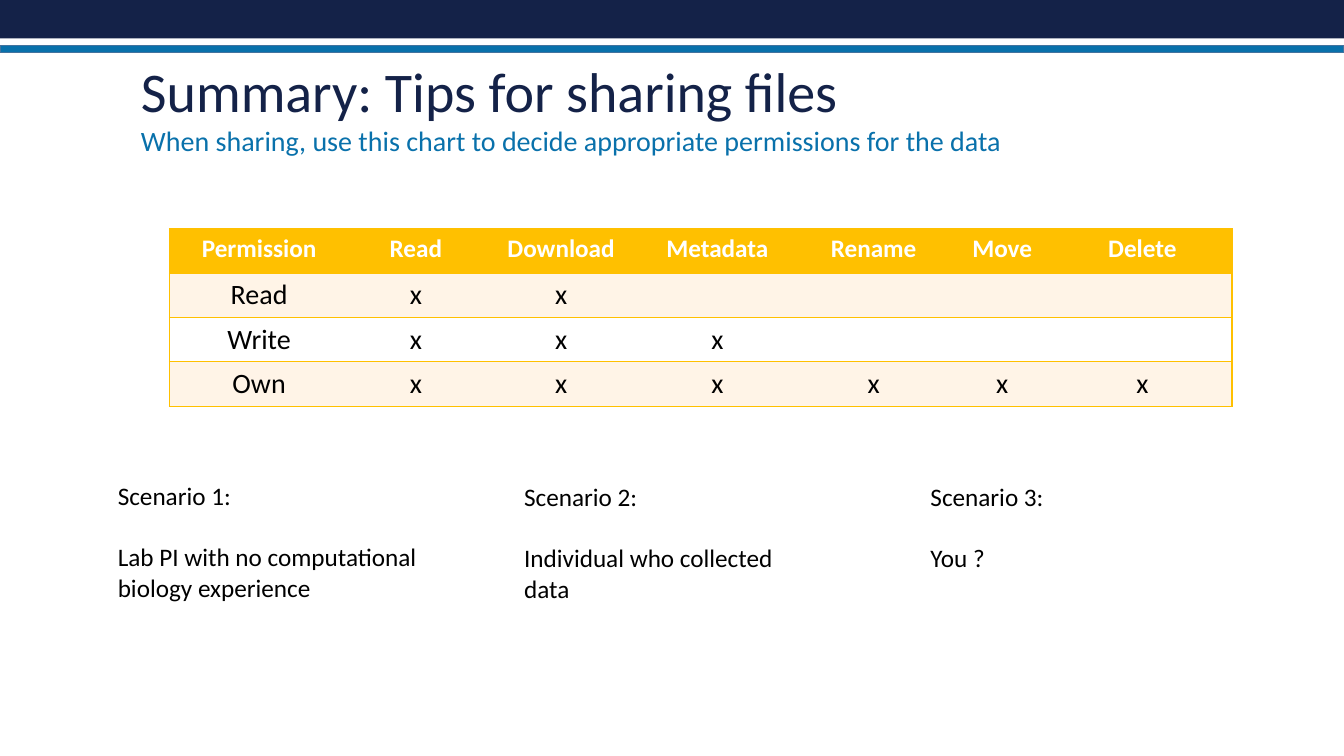
from lxml.etree import SubElement
from pptx import Presentation
from pptx.dml.color import RGBColor
from pptx.enum.shapes import MSO_SHAPE
from pptx.enum.text import MSO_ANCHOR, PP_ALIGN
from pptx.oxml.ns import qn
from pptx.util import Inches, Pt

COLORS = {
    "navy": "142248",
    "blue": "0971AB",
    "edge": "43739E",
    "gold": "FFC000",
    "cream": "FFF4E7",
    "white": "FFFFFF",
    "black": "000000",
}
FONT = "Calibri"
PLAIN_TABLE_STYLE = "{2D5ABB26-0587-4C30-8999-92F81FD0307C}"
HEADINGS = ["Permission", "Read", "Download", "Metadata", "Rename", "Move", "Delete"]
COLUMN_WIDTHS = [1.78, 1.33, 1.55, 1.55, 1.55, 1, 1.78]
ROW_HEIGHT = 0.44
GRANTED = {"Read": 2, "Write": 3, "Own": 6}
SCENARIOS = [
    (1.07, 4.72, 3.66, 1.62, "Scenario 1:", "Lab PI with no computational biology experience"),
    (5.1, 4.73, 3.02, 1.62, "Scenario 2:", "Individual who collected data"),
    (9.13, 4.73, 3.02, 1.31, "Scenario 3:", "You ?"),
]


def color(name):
    """Return the named colour."""
    return RGBColor.from_string(COLORS[name])


def write(para, text, size=18, ink="black", bold=False, align=None, line_spacing=None, before=None):
    """Write one formatted span into a paragraph."""
    para.alignment = align
    para.line_spacing = line_spacing
    if before is not None:
        para.space_before = Pt(before)
    span = para.add_run()
    span.text = text
    span.font.name = FONT
    span.font.size = Pt(size)
    span.font.bold = bold
    span.font.color.rgb = color(ink)


def add_band(page, top, height, fill, edge=None):
    """Add a full-width band."""
    band = page.shapes.add_shape(
        MSO_SHAPE.RECTANGLE, 0, Inches(top), Inches(13.33), Inches(height))
    band.shadow.inherit = False
    band.fill.solid()
    band.fill.fore_color.rgb = color(fill)
    if edge:
        band.line.color.rgb = color(edge)
        band.line.width = Pt(1)
    else:
        band.line.fill.background()


def add_text_frame(page, left, top, width, height, anchor=MSO_ANCHOR.TOP):
    """Add a wrapping text box and return its frame."""
    box = page.shapes.add_textbox(Inches(left), Inches(top), Inches(width), Inches(height))
    frame = box.text_frame
    frame.word_wrap = True
    frame.vertical_anchor = anchor
    return frame


def add_scenario(page, left, top, width, height, label, description):
    """Add a scenario label with its description below."""
    frame = add_text_frame(page, left, top, width, height)
    write(frame.paragraphs[0], label)
    write(frame.add_paragraph(), description, before=22)


def style_cell(cell, fill, sides):
    """Fill a cell and draw gold borders on the given sides."""
    properties = cell._tc.get_or_add_tcPr()
    for side in sides:
        line = SubElement(properties, qn(f"a:ln{side}"), w=str(Pt(1)))
        solid = SubElement(line, qn("a:solidFill"))
        SubElement(solid, qn("a:srgbClr"), val=COLORS["gold"])
    cell.fill.solid()
    cell.fill.fore_color.rgb = color(fill)


def add_permission_table(page):
    """Add the table of rights granted by each permission."""
    rows = [HEADINGS]
    for name, count in GRANTED.items():
        rows.append([name] + ["x"] * count + [""] * (len(HEADINGS) - 1 - count))
    table = page.shapes.add_table(
        len(rows), len(HEADINGS), Inches(1.68), Inches(2.27),
        Inches(sum(COLUMN_WIDTHS)), Inches(ROW_HEIGHT * len(rows))).table
    table._tbl.tblPr.find(qn("a:tableStyleId")).text = PLAIN_TABLE_STYLE
    table.horz_banding = False
    for column, width in zip(table.columns, COLUMN_WIDTHS):
        column.width = Inches(width)
    last = len(HEADINGS) - 1
    for row_index, values in enumerate(rows):
        header = row_index == 0
        table.rows[row_index].height = Inches(ROW_HEIGHT)
        fill = "gold" if header else "cream" if row_index % 2 else "white"
        for column_index, text in enumerate(values):
            cell = table.cell(row_index, column_index)
            sides = {0: "LTB", last: "RTB"}.get(column_index, "TB")
            style_cell(cell, fill, sides)
            if text:
                write(cell.text_frame.paragraphs[0], text, size=18 if header else 20,
                      ink="white" if header else "black", bold=header, align=PP_ALIGN.CENTER)


def main():
    """Build and save the slide."""
    deck = Presentation()
    deck.slide_width, deck.slide_height = Inches(13.33), Inches(7.5)
    page = deck.slides.add_slide(deck.slide_layouts[6])
    add_band(page, 0, 0.38, "navy")
    add_band(page, 0.45, 0.07, "blue", edge="edge")
    title = add_text_frame(page, 1.3, 0.6, 11.83, 0.69, anchor=MSO_ANCHOR.BOTTOM)
    write(title.paragraphs[0], "Summary: Tips for sharing files",
          size=40, ink="navy", line_spacing=0.9)
    subtitle = add_text_frame(page, 1.3, 1.21, 11.74, 0.52)
    write(subtitle.paragraphs[0],
          "When sharing, use this chart to decide appropriate permissions for the data",
          size=20, ink="blue", line_spacing=0.9)
    add_permission_table(page)
    for scenario in SCENARIOS:
        add_scenario(page, *scenario)
    deck.save("out.pptx")


if __name__ == "__main__":
    main()
